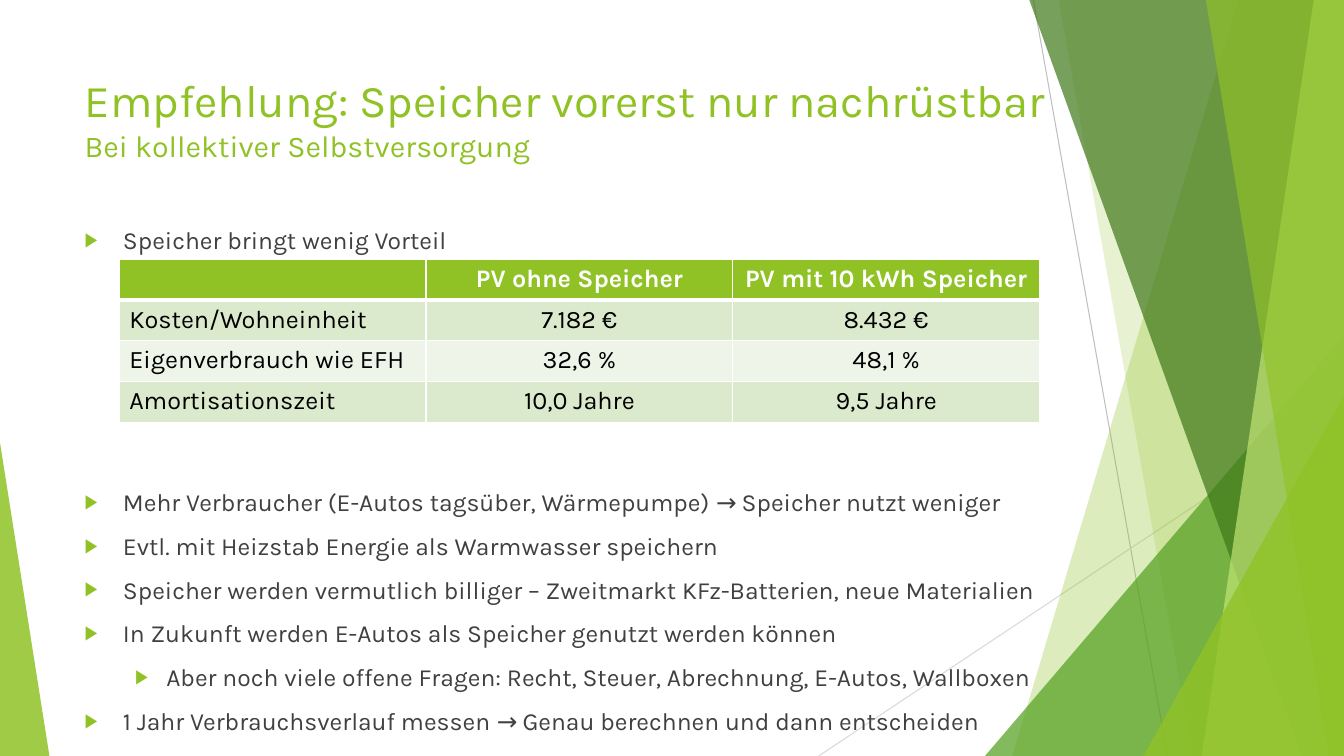
import pptx
import pptx.util
import pptx.dml.color
import pptx.enum.shapes
import pptx.enum.text
import pptx.oxml
import pptx.oxml.ns

COLORS = {
    "lime": "90C226", "pale": "C0E474", "leaf": "54A021", "forest": "3F7819",
    "grey": "404040", "rule": "BFBFBF", "faint": "D9D9D9", "white": "FFFFFF",
    "black": "000000", "band": "DBE9CD", "light": "EEF4E8",
}
ALIGN = pptx.enum.text.PP_ALIGN
SHAPES = pptx.enum.shapes.MSO_SHAPE


def color(name):
    return pptx.dml.color.RGBColor.from_string(COLORS[name])


def element(markup):
    tag, _, rest = markup.partition(" ")
    return pptx.oxml.parse_xml(f"<a:{tag} {pptx.oxml.ns.nsdecls('a')} {rest}")


def write(paragraph, text, size=18, fill="black", bold=False, align=ALIGN.LEFT):
    paragraph.alignment = align
    run = paragraph.add_run()
    run.text = text
    run.font.name = "Karla"
    run.font.size = pptx.util.Pt(size)
    run.font.bold = bold
    run.font.color.rgb = color(fill)


class Page:
    def __init__(self, deck):
        self.width, self.height = deck.slide_width, deck.slide_height
        self.slide = deck.slides.add_slide(deck.slide_layouts[1])
        self.shapes = self.slide.shapes

    def x(self, percent):
        return round(self.width * percent / 100)

    def y(self, percent):
        return round(self.height * percent / 100)

    def box(self, left, top, width, height):
        return self.x(left), self.y(top), self.x(width), self.y(height)

    def line(self, start, end, fill):
        connector = self.shapes.add_connector(
            pptx.enum.shapes.MSO_CONNECTOR.STRAIGHT,
            self.x(start[0]), self.y(start[1]), self.x(end[0]), self.y(end[1]))
        connector.line.color.rgb = color(fill)
        connector.line.width = pptx.util.Pt(0.75)
        connector._element.spPr.append(element("effectLst />"))

    def paint(self, shape, fill, opacity):
        shape.shadow.inherit = False
        shape.line.fill.background()
        shape.fill.solid()
        shape.fill.fore_color.rgb = color(fill)
        tint = shape._element.spPr.find(".//" + pptx.oxml.ns.qn("a:srgbClr"))
        tint.append(element(f'alpha val="{opacity * 1000}"/>'))

    def facet(self, top, bottom, fill, opacity):
        outline = self.shapes.build_freeform(self.x(top), 0)
        outline.add_line_segments([
            (self.width, 0), (self.width, self.height), (self.x(bottom), self.height)])
        self.paint(outline.convert_to_shape(), fill, opacity)

    def triangle(self, left, top, width, apex, fill, opacity):
        corner = self.shapes.add_shape(
            SHAPES.ISOSCELES_TRIANGLE, *self.box(left, top, width, 100 - top))
        corner.adjustments[0] = apex
        self.paint(corner, fill, opacity)

    def placeholder(self, index, *area):
        holder = self.slide.placeholders[index]
        holder.left, holder.top, holder.width, holder.height = self.box(*area)
        self.shapes._spTree.append(holder._element)
        frame = holder.text_frame
        frame.word_wrap = True
        frame.auto_size = pptx.enum.text.MSO_AUTO_SIZE.NONE
        frame.vertical_anchor = pptx.enum.text.MSO_ANCHOR.TOP
        return frame

    def title(self, heading, subheading, *area):
        paragraph = self.placeholder(0, *area).paragraphs[0]
        write(paragraph, heading, size=32.4, fill="lime")
        paragraph.add_line_break()
        write(paragraph, subheading, size=21.6, fill="lime")

    def bullets(self, items, *area):
        frame = self.placeholder(1, *area)
        for number, (text, level, gap) in enumerate(items):
            paragraph = frame.add_paragraph() if number else frame.paragraphs[0]
            paragraph.level = level
            paragraph.space_before = pptx.util.Pt(gap)
            paragraph.line_spacing = pptx.util.Pt(21.2)
            write(paragraph, text, size=17.6, fill="grey")
            margin, hanging = [(0.38, 0.38), (0.81, 0.31)][level]
            settings = paragraph._p.get_or_add_pPr()
            settings.set("marL", str(pptx.util.Inches(margin)))
            settings.set("indent", str(-pptx.util.Inches(hanging)))
            settings.append(element(
                f'buClr ><a:srgbClr val="{COLORS["lime"]}"/></a:buClr>'))
            settings.append(element('buSzPct val="80000"/>'))
            settings.append(element('buChar char="▶"/>'))

    def cell(self, cell, text, fill, header, align):
        write(cell.text_frame.paragraphs[0], text, bold=header, align=align,
              fill="white" if header else "black")
        borders = cell._tc.get_or_add_tcPr()
        for side in "LRTB":
            points = 3 if header and side == "B" else 1
            borders.append(element(
                f'ln{side} w="{points * 12700}"><a:solidFill>'
                f'<a:srgbClr val="{COLORS["white"]}"/></a:solidFill></a:ln{side}>'))
        cell.fill.solid()
        cell.fill.fore_color.rgb = color(fill)

    def table(self, rows, *area):
        grid = self.shapes.add_table(len(rows), len(rows[0]), *self.box(*area)).table
        for r, row in enumerate(rows):
            fill = "lime" if r == 0 else ("light", "band")[r % 2]
            for c, text in enumerate(row):
                self.cell(grid.cell(r, c), text, fill, r == 0,
                          ALIGN.CENTER if c else ALIGN.LEFT)


def main():
    deck = pptx.Presentation()
    deck.slide_width = pptx.util.Inches(13.33)
    deck.slide_height = pptx.util.Inches(7.5)
    page = Page(deck)

    page.line((76.89, 0), (86.87, 100), "rule")
    page.line((100, 53.73), (60.92, 100), "faint")
    page.facet(92.12, 75.32, "lime", 30)
    page.facet(78.77, 88.75, "lime", 20)
    page.triangle(73.29, 44.4, 26.71, 1, "leaf", 72)
    page.facet(76.59, 96.85, "forest", 70)
    page.facet(97.75, 89.42, "pale", 70)
    page.facet(89.72, 98.87, "lime", 65)
    page.triangle(85.07, 52.4, 14.93, 1, "lime", 80)
    page.triangle(0, 58.53, 3.68, 0, "lime", 85)

    page.title("Empfehlung: Speicher vorerst nur nachrüstbar",
               "Bei kollektiver Selbstversorgung", 5.55, 8.93, 75.17, 19.2)
    page.bullets([
        ("Speicher bringt wenig Vorteil", 0, 10),
        ("Mehr Verbraucher (E-Autos tagsüber, Wärmepumpe) → Speicher nutzt weniger", 0, 166),
        ("Evtl. mit Heizstab Energie als Warmwasser speichern", 0, 10),
        ("Speicher werden vermutlich billiger – Zweitmarkt KFz-Batterien, neue Materialien", 0, 10),
        ("In Zukunft werden E-Autos als Speicher genutzt werden können", 0, 10),
        ("Aber noch viele offene Fragen: Recht, Steuer, Abrechnung, E-Autos, Wallboxen", 1, 10),
        ("1 Jahr Verbrauchsverlauf messen → Genau berechnen und dann entscheiden", 0, 10),
    ], 5.55, 29.07, 73.97, 62.93)
    page.table([
        ("", "PV ohne Speicher", "PV mit 10 kWh Speicher"),
        ("Kosten/Wohneinheit", "7.182 €", "8.432 €"),
        ("Eigenverbrauch wie EFH", "32,6 %", "48,1 %"),
        ("Amortisationszeit", "10,0 Jahre", "9,5 Jahre"),
    ], 8.87, 34.27, 68.49, 21.6)

    deck.save("out.pptx")


if __name__ == "__main__":
    main()
